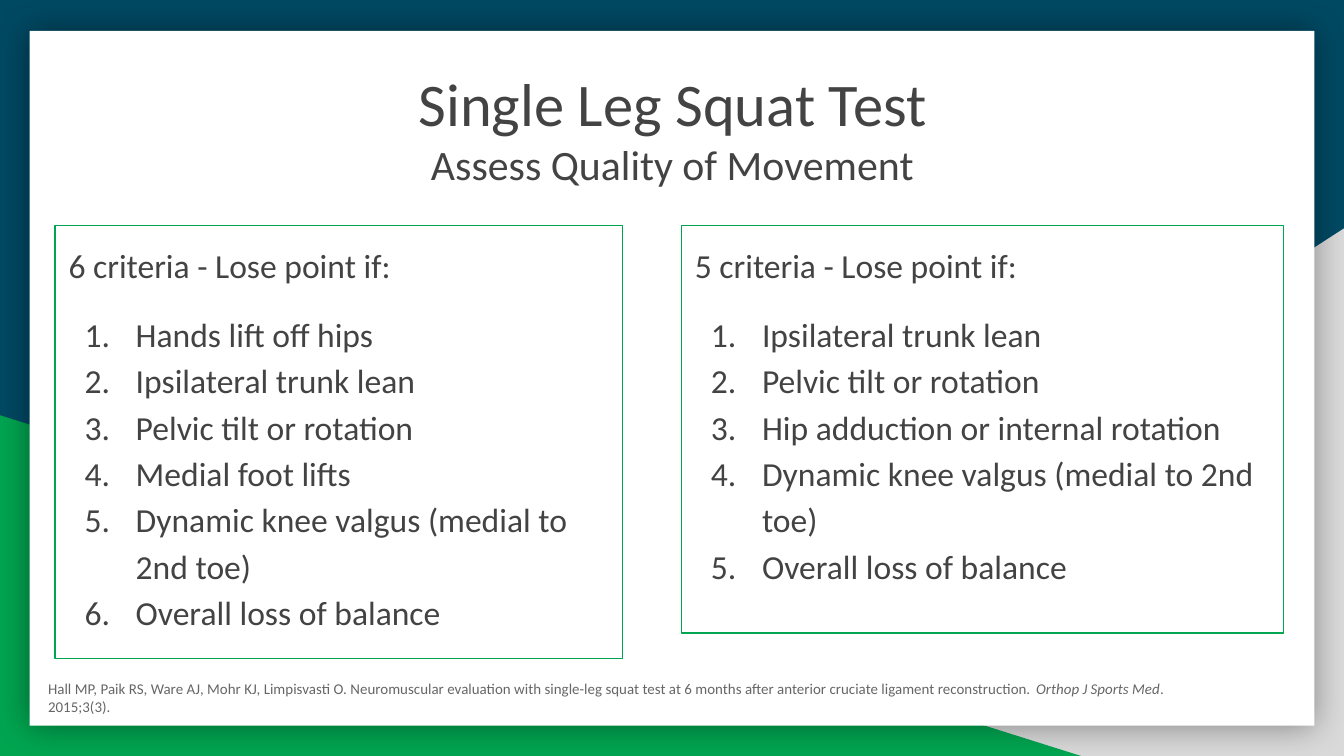
from dataclasses import dataclass

import lxml.etree
import pptx
import pptx.dml.color
import pptx.enum.shapes
import pptx.enum.text
import pptx.oxml
import pptx.oxml.ns
import pptx.util

Inches = pptx.util.Inches
Pt = pptx.util.Pt
SHAPE = pptx.enum.shapes.MSO_SHAPE


@dataclass(frozen=True)
class Theme:
    font: str = "Calibri"
    navy: str = "004963"
    green: str = "00A550"
    grey: str = "D9D9D9"
    white: str = "FFFFFF"
    shadow: str = "000000"
    ink: str = "434343"
    muted: str = "666666"
    title_size: float = 32.4
    subtitle_size: float = 22.4
    body_size: float = 18
    citation_size: float = 8


def rgb(color):
    return pptx.dml.color.RGBColor.from_string(color)


def add_xml(parent, tag, **attributes):
    child = lxml.etree.SubElement(parent, pptx.oxml.ns.qn(tag))
    for name, value in attributes.items():
        child.set(name, str(value))
    return child


class SlideBuilder:
    def __init__(self, slide, theme):
        self.slide = slide
        self.theme = theme
        self.backdrop_count = 0
        fill = slide.background.fill
        fill.solid()
        fill.fore_color.rgb = rgb(theme.navy)

    def backdrop(self, kind, box, color, flip=False, glow=False):
        shape = self.slide.shapes.add_shape(kind, *map(Inches, box))
        shape.fill.solid()
        shape.fill.fore_color.rgb = rgb(color)
        shape.line.fill.background()
        shape.shadow.inherit = False
        properties = shape._element.spPr
        if flip:
            properties.xfrm.set("flipH", "1")
        if glow:
            effects = properties.find(pptx.oxml.ns.qn("a:effectLst"))
            shadow = add_xml(effects, "a:outerShdw", blurRad=Pt(18), dist=0,
                             algn="ctr", rotWithShape=0)
            tint = add_xml(shadow, "a:srgbClr", val=self.theme.shadow)
            add_xml(tint, "a:alpha", val=40000)
        self.slide.shapes._spTree.insert(2 + self.backdrop_count, shape._element)
        self.backdrop_count += 1

    def frame(self, shape, box):
        shape.left, shape.top, shape.width, shape.height = map(Inches, box)
        frame = shape.text_frame
        frame.word_wrap = True
        frame.auto_size = pptx.enum.text.MSO_AUTO_SIZE.NONE
        frame.vertical_anchor = pptx.enum.text.MSO_ANCHOR.TOP
        frame.margin_left = frame.margin_right = Inches(0.1)
        frame.margin_top = frame.margin_bottom = Inches(0.1)
        return frame

    def paragraph(self, frame, index):
        return frame.add_paragraph() if index else frame.paragraphs[0]

    def style(self, paragraph, size, color):
        paragraph.font.name = self.theme.font
        paragraph.font.size = Pt(size)
        paragraph.font.color.rgb = rgb(color)

    def title(self, box, heading, subheading):
        frame = self.frame(self.slide.shapes.title, box)
        lines = [(heading, self.theme.title_size),
                 (subheading, self.theme.subtitle_size)]
        for index, (text, size) in enumerate(lines):
            line = self.paragraph(frame, index)
            line.text = text
            line.alignment = pptx.enum.text.PP_ALIGN.CENTER
            self.style(line, size, self.theme.ink)

    def criteria(self, placeholder_index, box, heading, items):
        panel = self.slide.placeholders[placeholder_index]
        frame = self.frame(panel, box)
        panel.line.color.rgb = rgb(self.theme.green)
        panel.line.width = Pt(0.75)
        for index, text in enumerate([heading, *items]):
            line = self.paragraph(frame, index)
            line.text = text
            line.line_spacing = 1.15
            line.space_before = Pt(12 if index == 1 else 0)
            properties = line._p.get_or_add_pPr()
            if index:
                properties.set("marL", str(Inches(0.5)))
                properties.set("indent", str(Inches(-0.38)))
                bullet_color = add_xml(properties, "a:buClr")
                add_xml(bullet_color, "a:srgbClr", val=self.theme.ink)
                add_xml(properties, "a:buFont", typeface=self.theme.font)
                add_xml(properties, "a:buAutoNum", type="arabicPeriod")
            else:
                properties.set("marL", "0")
                properties.set("indent", "0")
                add_xml(properties, "a:buNone")
            self.style(line, self.theme.body_size, self.theme.ink)

    def citation(self, box, before, journal, after):
        note = self.slide.shapes.add_textbox(*map(Inches, box))
        line = self.frame(note, box).paragraphs[0]
        for text in (before, journal, after):
            run = line.add_run()
            run.text = text
            if text == journal:
                run.font.italic = True
        self.style(line, self.theme.citation_size, self.theme.muted)


def main():
    theme = Theme()
    presentation = pptx.Presentation()
    presentation.slide_width = Inches(10)
    presentation.slide_height = Inches(10) * 9 // 16
    two_content = presentation.slide_layouts[3]
    builder = SlideBuilder(presentation.slides.add_slide(two_content), theme)

    builder.backdrop(SHAPE.RIGHT_TRIANGLE, (3.92, 1.7, 6.08, 3.93), theme.grey, flip=True)
    builder.backdrop(SHAPE.RIGHT_TRIANGLE, (0, 3.09, 8.06, 2.54), theme.green)
    builder.backdrop(SHAPE.RECTANGLE, (0.22, 0.23, 9.56, 5.17), theme.white, glow=True)

    builder.title((0.9, 0.39, 8.21, 0.95), "Single Leg Squat Test",
                  "Assess Quality of Movement")

    trunk_and_pelvis = ["Ipsilateral trunk lean", "Pelvic tilt or rotation"]
    knee_and_balance = ["Dynamic knee valgus (medial to 2nd toe)",
                        "Overall loss of balance"]
    builder.criteria(1, (0.41, 1.68, 4.22, 3.22), "6 criteria - Lose point if:",
                     ["Hands lift off hips", *trunk_and_pelvis,
                      "Medial foot lifts", *knee_and_balance])
    builder.criteria(2, (5.07, 1.68, 4.48, 3.03), "5 criteria - Lose point if:",
                     [*trunk_and_pelvis, "Hip adduction or internal rotation",
                      *knee_and_balance])

    builder.citation(
        (0.26, 4.96, 8.63, 0.47),
        "Hall MP, Paik RS, Ware AJ, Mohr KJ, Limpisvasti O. Neuromuscular evaluation "
        "with single-leg squat test at 6 months after anterior cruciate ligament "
        "reconstruction. ",
        "Orthop J Sports Med",
        ". 2015;3(3).")
    presentation.save("out.pptx")


if __name__ == "__main__":
    main()
